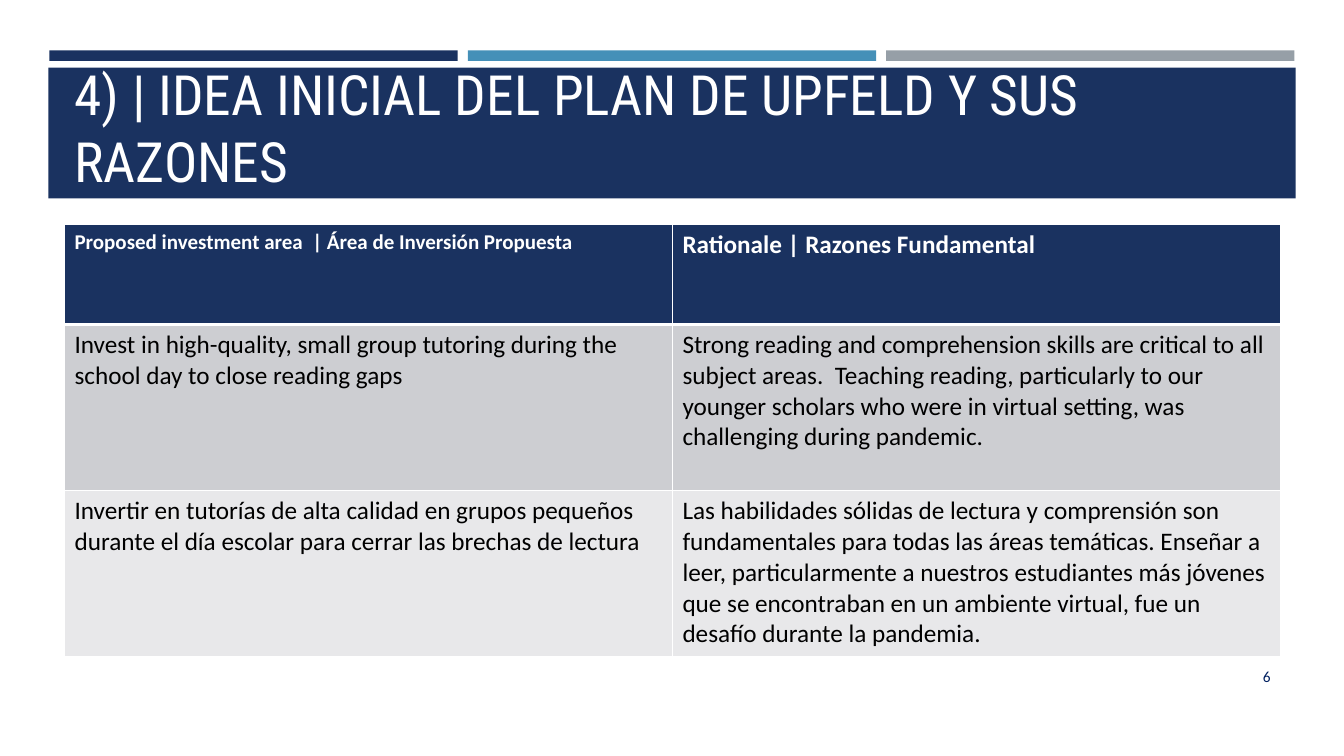
from dataclasses import dataclass

from lxml.etree import SubElement
from pptx import Presentation
from pptx.dml.color import RGBColor
from pptx.enum.shapes import MSO_SHAPE
from pptx.enum.text import MSO_ANCHOR, MSO_AUTO_SIZE, PP_ALIGN
from pptx.oxml.ns import qn
from pptx.util import Inches, Pt


@dataclass(frozen=True)
class Theme:
    navy: str = "1A3260"
    blue: str = "4590B8"
    grey: str = "969FA7"
    band_dark: str = "CDCED2"
    band_light: str = "E8E8EA"
    white: str = "FFFFFF"
    black: str = "000000"
    page_ink: str = "002060"
    heading_font: str = "Roboto Condensed"
    body_font: str = "Calibri"
    title_size: float = 39.6
    body_size: float = 18
    small_header_size: float = 15
    page_size: float = 11
    rule: float = 1
    header_rule: float = 3


@dataclass(frozen=True)
class Area:
    """Left, top, width and height as percentages of the slide."""
    left: float
    top: float
    width: float
    height: float

    def emu(self) -> tuple[int, int, int, int]:
        return (across(self.left), down(self.top), across(self.width), down(self.height))


@dataclass(frozen=True)
class PlanRow:
    investment: str
    rationale: str
    fill: str
    ink: str
    height: float
    sizes: tuple[float, float]
    bold: bool = False


THEME = Theme()
SLIDE_WIDTH, SLIDE_HEIGHT = Inches(13.33), Inches(7.5)

BAR = Area(3.68, 6.67, 30.38, 1.4)
BAR_PITCH = 31.13
BANNER = Area(3.6, 8.93, 92.8, 17.33)
TITLE = Area(4.8, 11.47, 90.47, 14.8)
PLAN = Area(4.8, 29.73, 90.47, 57.07)
PAGE = Area(86.65, 86.8, 8.63, 5.33)

HEADING = "4) | IDEA INICIAL DEL PLAN DE UPFELD Y SUS RAZONES"
BODY_SIZES = (THEME.body_size, THEME.body_size)
PLAN_ROWS = [
    PlanRow("Proposed investment area  | Área de Inversión Propuesta",
            "Rationale | Razones Fundamental",
            THEME.navy, THEME.white, 13.2,
            (THEME.small_header_size, THEME.body_size), bold=True),
    PlanRow("Invest in high-quality, small group tutoring during the school day "
            "to close reading gaps",
            "Strong reading and comprehension skills are critical to all subject areas.  "
            "Teaching reading, particularly to our younger scholars who were in virtual "
            "setting, was challenging during pandemic.",
            THEME.band_dark, THEME.black, 22, BODY_SIZES),
    PlanRow("Invertir en tutorías de alta calidad en grupos pequeños durante el día "
            "escolar para cerrar las brechas de lectura",
            "Las habilidades sólidas de lectura y comprensión son fundamentales para todas "
            "las áreas temáticas. Enseñar a leer, particularmente a nuestros estudiantes "
            "más jóvenes que se encontraban en un ambiente virtual, fue un desafío durante "
            "la pandemia.",
            THEME.band_light, THEME.black, 21.87, BODY_SIZES),
]


def across(share: float) -> int:
    return round(SLIDE_WIDTH * share / 100)


def down(share: float) -> int:
    return round(SLIDE_HEIGHT * share / 100)


def write(frame, text: str, font: str, size: float, ink: str, bold: bool = False) -> None:
    frame.text = text
    for run in frame.paragraphs[0].runs:
        run.font.name = font
        run.font.size = Pt(size)
        run.font.bold = bold
        run.font.color.rgb = RGBColor.from_string(ink)


def add_block(slide, area: Area, fill: str) -> None:
    block = slide.shapes.add_shape(MSO_SHAPE.RECTANGLE, *area.emu())
    block.shadow.inherit = False
    block.fill.solid()
    block.fill.fore_color.rgb = RGBColor.from_string(fill)
    block.line.fill.background()


def add_borders(cell, top: float, bottom: float) -> None:
    properties = cell._tc.get_or_add_tcPr()
    widths = {"a:lnL": THEME.rule, "a:lnR": THEME.rule, "a:lnT": top, "a:lnB": bottom}
    for position, (side, width) in enumerate(widths.items()):
        border = SubElement(properties, qn(side), w=str(Pt(width)))
        fill = SubElement(border, qn("a:solidFill"))
        SubElement(fill, qn("a:srgbClr"), val=THEME.white)
        properties.insert(position, border)


def add_title(slide) -> None:
    title = slide.shapes.title
    title.left, title.top, title.width, title.height = TITLE.emu()
    # Lift the title above the banner
    slide.shapes._spTree.append(title._element)
    frame = title.text_frame
    write(frame, HEADING, THEME.heading_font, THEME.title_size, THEME.white)
    frame.word_wrap = True
    frame.auto_size = MSO_AUTO_SIZE.NONE
    frame.vertical_anchor = MSO_ANCHOR.BOTTOM
    frame.paragraphs[0].alignment = PP_ALIGN.LEFT


def add_plan(slide) -> None:
    plan = slide.shapes.add_table(len(PLAN_ROWS), 2, *PLAN.emu()).table
    for index, entry in enumerate(PLAN_ROWS):
        plan.rows[index].height = down(entry.height)
        top = THEME.header_rule if index == 1 else THEME.rule
        bottom = THEME.header_rule if index == 0 else THEME.rule
        wordings = (entry.investment, entry.rationale)
        for cell, wording, size in zip(plan.rows[index].cells, wordings, entry.sizes):
            write(cell.text_frame, wording, THEME.body_font, size, entry.ink, entry.bold)
            cell.fill.solid()
            cell.fill.fore_color.rgb = RGBColor.from_string(entry.fill)
            add_borders(cell, top, bottom)


def add_page_number(slide) -> None:
    frame = slide.shapes.add_textbox(*PAGE.emu()).text_frame
    write(frame, "6", THEME.body_font, THEME.page_size, THEME.page_ink)
    frame.word_wrap = True
    frame.vertical_anchor = MSO_ANCHOR.MIDDLE
    frame.paragraphs[0].alignment = PP_ALIGN.RIGHT


def main() -> None:
    deck = Presentation()
    deck.slide_width, deck.slide_height = SLIDE_WIDTH, SLIDE_HEIGHT
    slide = deck.slides.add_slide(deck.slide_layouts[5])

    # Accent bars and title banner
    for column, colour in enumerate((THEME.navy, THEME.blue, THEME.grey)):
        left = BAR.left + column * BAR_PITCH
        add_block(slide, Area(left, BAR.top, BAR.width, BAR.height), colour)
    add_block(slide, BANNER, THEME.navy)
    add_title(slide)

    # Investment plan and page number
    add_plan(slide)
    add_page_number(slide)
    deck.save("out.pptx")


if __name__ == "__main__":
    main()
